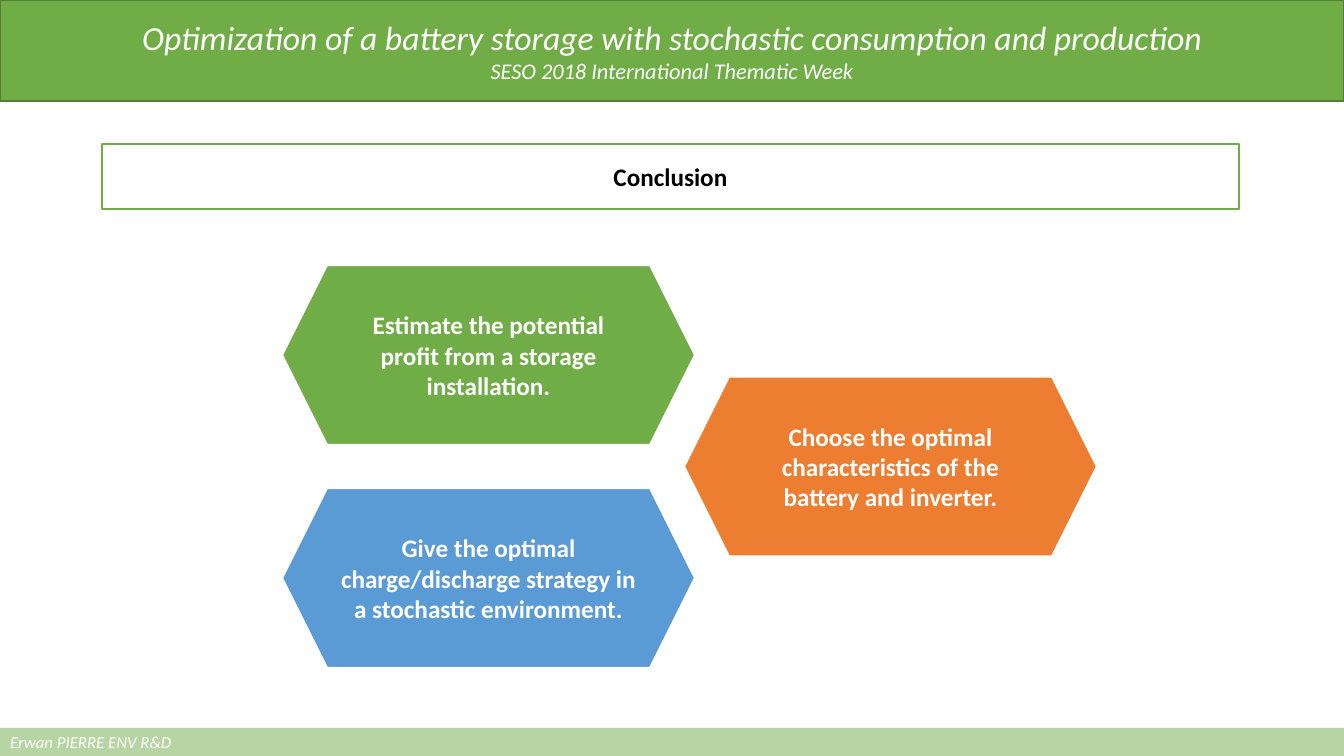
from lxml.etree import SubElement
from pptx import Presentation
from pptx.dml.color import RGBColor
from pptx.enum.shapes import MSO_SHAPE as Shape
from pptx.enum.text import MSO_ANCHOR as Anchor, PP_ALIGN as Align
from pptx.oxml.ns import qn
from pptx.util import Pt

COLORS = {"green": "70AD47", "edge": "538035", "orange": "ED7D31",
          "blue": "5B9BD5", "white": "FFFFFF", "black": "000000"}
TALK = [("Optimization of a battery storage with stochastic consumption and production", 24),
        ("SESO 2018 International Thematic Week", 16)]
HEADING = [("Conclusion", 18)]
AUTHOR = [("Erwan PIERRE ENV R&D", 12)]
# text, fill, column, side margin in px
GOALS = [
    ("Estimate the potential profit from a storage installation.", "green", 0, 20),
    ("Choose the optimal characteristics of the battery and inverter.", "orange", 1, 20),
    ("Give the optimal charge/discharge strategy in a stochastic environment.", "blue", 0, 5),
]

WIDE, HIGH = 1344, 756
HEAD_H, FOOT_H = 101, 28
HEX_W, HEX_H = 413, 180
HEX_X, HEX_Y = 282, 265
STEP_X, STEP_Y = 402, 111.5


def px(n):
    return round(n * 914400 / 100.8)


def rgb(name):
    return RGBColor.from_string(COLORS[name])


def write(shape, lines, color="white", bold=False, italic=False,
          align=Align.CENTER, side=10, top=5):
    frame = shape.text_frame
    frame.word_wrap = True
    frame.vertical_anchor = Anchor.MIDDLE
    frame.margin_left = frame.margin_right = px(side)
    frame.margin_top = frame.margin_bottom = px(top)
    for i, (text, size) in enumerate(lines):
        para = frame.add_paragraph() if i else frame.paragraphs[0]
        para.alignment = align
        run = para.add_run()
        run.text = text
        font = run.font
        font.name, font.size = "Calibri", Pt(size)
        font.bold, font.italic = bold, italic
        font.color.rgb = rgb(color)


def draw(slide, kind, x, y, w, h, fill, line=None, weight=1):
    shape = slide.shapes.add_shape(kind, px(x), px(y), px(w), px(h))
    shape.shadow.inherit = False
    shape.fill.solid()
    shape.fill.fore_color.rgb = rgb(fill)
    if line:
        shape.line.color.rgb = rgb(line)
        shape.line.width = Pt(weight)
    else:
        shape.line.fill.background()
    return shape


def main():
    deck = Presentation()
    deck.slide_width, deck.slide_height = px(WIDE), px(HIGH)
    slide = deck.slides.add_slide(deck.slide_layouts[5])

    banner = draw(slide, Shape.RECTANGLE, 0, 0, WIDE, HEAD_H, "green", "edge")
    write(banner, TALK, italic=True)

    footer = draw(slide, Shape.RECTANGLE, 0, HIGH - FOOT_H, WIDE, FOOT_H, "green")
    tint = footer.fill._xPr.find(".//" + qn("a:srgbClr"))
    SubElement(tint, qn("a:alpha"), val="50000")
    write(footer, AUTHOR, italic=True, align=Align.LEFT, top=0)

    title = slide.shapes.title
    title.left, title.top = px(102), px(144)
    title.width, title.height = px(1137), px(65)
    title.line.color.rgb = rgb("green")
    title.line.width = Pt(1)
    write(title, HEADING, color="black", bold=True)

    for row, (text, fill, col, side) in enumerate(GOALS):
        goal = draw(slide, Shape.HEXAGON, HEX_X + col * STEP_X, HEX_Y + row * STEP_Y,
                    HEX_W, HEX_H, fill, "white", 1.5)
        write(goal, [(text, 18)], bold=True, side=side, top=0)

    deck.save("out.pptx")


if __name__ == "__main__":
    main()
